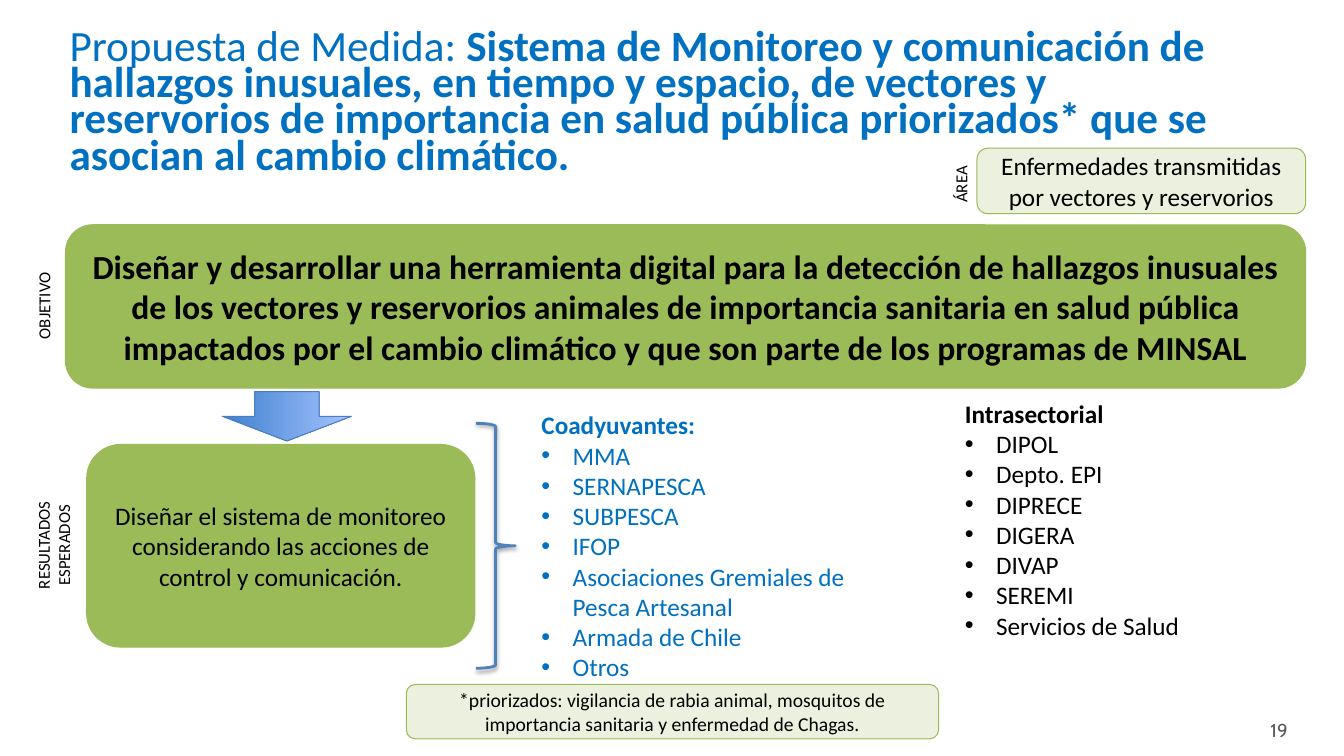
from dataclasses import dataclass

from lxml.etree import SubElement
from pptx import Presentation
from pptx.dml.color import RGBColor
from pptx.enum.shapes import MSO_SHAPE
from pptx.enum.text import MSO_ANCHOR, MSO_AUTO_SIZE, PP_ALIGN
from pptx.oxml.ns import qn
from pptx.util import Emu, Pt

EMU_PER_PX = 9144  # 100 px to the inch
BULLET_INDENT = 31


@dataclass(frozen=True)
class Theme:
    blue: str = "0070C0"
    black: str = "000000"
    grey: str = "595959"
    green: str = "9BBB59"
    pale_green: str = "EBF1DE"
    brace: str = "4F81BD"
    arrow_line: str = "4B7EBC"
    arrow_dark: str = "3F80CE"
    arrow_light: str = "A4C4FF"
    font: str = "Calibri"
    number_font: str = "Cabin"
    title_size: float = 30.8
    goal_size: float = 24
    body_size: float = 18
    note_size: float = 14
    number_size: float = 13.3
    label_size: float = 12


THEME = Theme()


def px(length):
    return Emu(length * EMU_PER_PX)


def rgb(code):
    return RGBColor.from_string(code)


def apply_format(target, values):
    for name, value in values.items():
        setattr(target, name, value)


def place(shape, box):
    apply_format(shape, dict(zip(("left", "top", "width", "height"), map(px, box))))


def add_run(paragraph, text, size, color=THEME.black, bold=False, font=THEME.font):
    run = paragraph.add_run()
    run.text = text
    apply_format(run.font, {"name": font, "size": Pt(size), "bold": bold})
    run.font.color.rgb = rgb(color)


def set_frame(shape, anchor=MSO_ANCHOR.MIDDLE, wrap=True):
    frame = shape.text_frame
    apply_format(frame, {
        "word_wrap": wrap,
        "auto_size": MSO_AUTO_SIZE.NONE,
        "vertical_anchor": anchor,
    })
    return frame


def fill_title(title, box, parts):
    place(title, box)
    paragraph = set_frame(title).paragraphs[0]
    apply_format(paragraph, {"alignment": PP_ALIGN.LEFT, "line_spacing": 0.7})
    for text, bold in parts:
        add_run(paragraph, text, THEME.title_size, THEME.blue, bold)


def fill_list(body, box, heading, items, color, anchor):
    """Bold heading without a bullet, then one bullet for each item."""
    place(body, box)
    frame = set_frame(body, anchor)
    for index, text in enumerate([heading, *items]):
        is_heading = index == 0
        paragraph = frame.paragraphs[0] if is_heading else frame.add_paragraph()
        apply_format(paragraph, {"space_before": Pt(0), "alignment": PP_ALIGN.LEFT})
        add_run(paragraph, text, THEME.body_size, color, is_heading)
        indent = 0 if is_heading else px(BULLET_INDENT)
        properties = paragraph._p.get_or_add_pPr()
        properties.set("marL", str(indent))
        properties.set("indent", str(-indent))
        if is_heading:
            SubElement(properties, qn("a:buNone"))
        else:
            SubElement(properties, qn("a:buFont"), typeface="Arial")
            SubElement(properties, qn("a:buChar"), char="•")


def add_outline(slide, kind, box, line_color, line_width):
    shape = slide.shapes.add_shape(kind, *map(px, box))
    shape.shadow.inherit = False
    shape.line.color.rgb = rgb(line_color)
    shape.line.width = Pt(line_width)
    return shape


def add_card(slide, box, text, fill, size, bold=False):
    card = add_outline(slide, MSO_SHAPE.ROUNDED_RECTANGLE, box, THEME.green, 0.75)
    card.fill.solid()
    card.fill.fore_color.rgb = rgb(fill)
    paragraph = set_frame(card).paragraphs[0]
    paragraph.alignment = PP_ALIGN.CENTER
    add_run(paragraph, text, size, bold=bold)


def add_down_arrow(slide, box):
    arrow = add_outline(slide, MSO_SHAPE.RIGHT_ARROW, box, THEME.arrow_line, 0.75)
    arrow.rotation = 90
    arrow.fill.gradient()
    arrow.fill.gradient_angle = 90
    for stop, color in zip(arrow.fill.gradient_stops, (THEME.arrow_dark, THEME.arrow_light)):
        stop.color.rgb = rgb(color)
    for stop, position in zip(arrow.fill.gradient_stops, (0, 1)):
        stop.position = position


def add_brace(slide, box):
    brace = add_outline(slide, MSO_SHAPE.RIGHT_BRACE, box, THEME.brace, 2)
    brace.fill.background()
    effects = brace._element.spPr.find(qn("a:effectLst"))
    shadow = SubElement(effects, qn("a:outerShdw"), blurRad=str(Pt(3.1)),
                        dist=str(Pt(1.6)), dir="5400000", rotWithShape="0")
    color = SubElement(shadow, qn("a:srgbClr"), val=THEME.black)
    SubElement(color, qn("a:alpha"), val="38000")


def add_label(slide, box, lines, align, rotation=270, wrap=False, **style):
    label = slide.shapes.add_textbox(*map(px, box))
    label.rotation = rotation
    frame = set_frame(label, MSO_ANCHOR.TOP, wrap)
    for index, text in enumerate(lines):
        paragraph = frame.add_paragraph() if index else frame.paragraphs[0]
        paragraph.alignment = align
        add_run(paragraph, text, **{"size": THEME.label_size, **style})


def main():
    deck = Presentation()
    apply_format(deck, {"slide_width": px(1333), "slide_height": px(750)})
    slide = deck.slides.add_slide(deck.slide_layouts[3])
    title, partners, internal = slide.placeholders

    # Title
    fill_title(title, (59, 23, 1150, 162), [
        ("Propuesta de Medida: ", False),
        ("Sistema de Monitoreo y comunicación de hallazgos inusuales, en tiempo y "
         "espacio, de vectores y reservorios de importancia en salud pública "
         "priorizados* que se asocian al cambio climático.", True),
    ])

    # Goal and the result it leads to
    add_card(slide, (65, 223, 1230, 162),
             "Diseñar y desarrollar una herramienta digital para la detección de "
             "hallazgos inusuales de los vectores y reservorios animales de "
             "importancia sanitaria en salud pública impactados por el cambio "
             "climático y que son parte de los programas de MINSAL",
             THEME.green, THEME.goal_size, bold=True)
    add_down_arrow(slide, (260, 349, 49, 128))
    add_card(slide, (86, 441, 385, 201),
             "Diseñar el sistema de monitoreo considerando las acciones de control "
             "y comunicación.", THEME.green, THEME.body_size)

    # Partners outside and inside the sector
    add_brace(slide, (472, 420, 39, 243))
    fill_list(partners, (527, 379, 347, 325), "Coadyuvantes:",
              ["MMA", "SERNAPESCA", "SUBPESCA", "IFOP",
               "Asociaciones Gremiales de Pesca Artesanal", "Armada de Chile", "Otros"],
              THEME.blue, MSO_ANCHOR.MIDDLE)
    fill_list(internal, (947, 390, 250, 252), "Intrasectorial",
              ["DIPOL", "Depto. EPI", "DIPRECE", "DIGERA", "DIVAP", "SEREMI",
               "Servicios de Salud"], THEME.black, MSO_ANCHOR.TOP)

    # Area and footnote
    add_card(slide, (969, 147, 326, 65),
             "Enfermedades transmitidas por vectores y reservorios",
             THEME.pale_green, THEME.body_size)
    add_card(slide, (403, 679, 528, 54),
             "*priorizados: vigilancia de rabia animal, mosquitos de importancia "
             "sanitaria y enfermedad de Chagas.", THEME.pale_green, THEME.note_size)

    # Side labels and slide number
    add_label(slide, (921, 172, 64, 30), ["ÁREA"], PP_ALIGN.RIGHT, wrap=True)
    add_label(slide, (0, 289, 87, 30), ["OBJETIVO"], PP_ALIGN.RIGHT)
    add_label(slide, (-1, 516, 108, 50), ["RESULTADOS", "ESPERADOS"], PP_ALIGN.CENTER)
    add_label(slide, (1239, 708, 48, 33), ["19"], PP_ALIGN.RIGHT, rotation=0,
              size=THEME.number_size, color=THEME.grey, font=THEME.number_font)

    deck.save("out.pptx")


if __name__ == "__main__":
    main()
